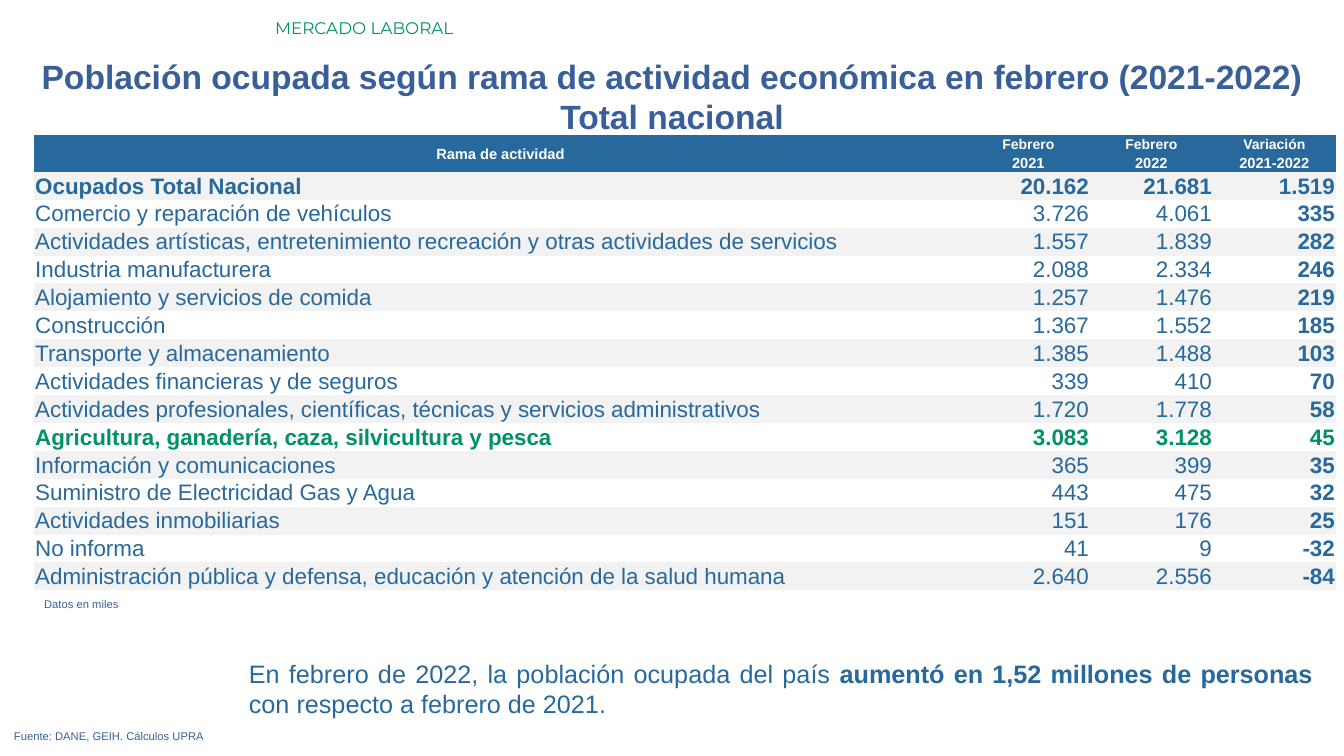
from pptx import Presentation
from pptx.dml.color import RGBColor
from pptx.enum.text import MSO_ANCHOR, MSO_AUTO_SIZE, PP_ALIGN
from pptx.util import Inches, Pt

COLORS = {
    "kicker": "009267",
    "title": "395F9B",
    "blue": "27689D",
    "highlight": "009165",
    "white": "FFFFFF",
    "band": "F2F2F2",
}
NO_STYLE = "{2D5ABB26-0587-4C30-8999-92F81FD0307C}"

HEADER = [
    ("Rama de actividad", "Febrero", "Febrero", "Variación"),
    ("", "2021", "2022", "2021-2022"),
]
BRANCHES = [
    ("Ocupados Total Nacional", "20.162", "21.681", "1.519"),
    ("Comercio y reparación de vehículos", "3.726", "4.061", "335"),
    ("Actividades artísticas, entretenimiento recreación y otras actividades de servicios",
     "1.557", "1.839", "282"),
    ("Industria manufacturera", "2.088", "2.334", "246"),
    ("Alojamiento y servicios de comida", "1.257", "1.476", "219"),
    ("Construcción", "1.367", "1.552", "185"),
    ("Transporte y almacenamiento", "1.385", "1.488", "103"),
    ("Actividades financieras y de seguros", "339", "410", "70"),
    ("Actividades profesionales, científicas, técnicas y servicios administrativos",
     "1.720", "1.778", "58"),
    ("Agricultura, ganadería, caza, silvicultura y pesca", "3.083", "3.128", "45"),
    ("Información y comunicaciones", "365", "399", "35"),
    ("Suministro de Electricidad Gas y Agua", "443", "475", "32"),
    ("Actividades inmobiliarias", "151", "176", "25"),
    ("No informa", "41", "9", "-32"),
    ("Administración pública y defensa, educación y atención de la salud humana",
     "2.640", "2.556", "-84"),
]
TOTAL_ROW, FARMING_ROW = 0, 9


class Deck:
    """Draws elements on a slide measured in a grid of 100 columns by 100 rows."""

    def __init__(self, font="Arial"):
        self.font = font
        self.prs = Presentation()
        self.prs.slide_width, self.prs.slide_height = Inches(13.33), Inches(7.5)
        self.s = self.prs.slides.add_slide(self.prs.slide_layouts[6])

    def cols(self, n):
        return round(self.prs.slide_width * n / 100)

    def rows(self, n):
        return round(self.prs.slide_height * n / 100)

    def style(self, p, size, color, bold=False, align=PP_ALIGN.LEFT, font=None):
        p.alignment = align
        for r in p.runs:
            r.font.name = font or self.font
            r.font.size = Pt(size)
            r.font.bold = bold
            r.font.color.rgb = RGBColor.from_string(COLORS[color])

    def text(self, x, y, w, h, text, size, color, **look):
        sp = self.s.shapes.add_textbox(self.cols(x), self.rows(y), self.cols(w), self.rows(h))
        tf = sp.text_frame
        tf.word_wrap = True
        tf.auto_size = MSO_AUTO_SIZE.SHAPE_TO_FIT_TEXT
        tf.text = text
        for p in tf.paragraphs:
            self.style(p, size, color, **look)
        return tf

    def mixed_text(self, x, y, w, h, pieces, size, color, **look):
        p = self.text(x, y, w, h, "", size, color).paragraphs[0]
        for piece, bold in pieces:
            p.add_run().text = piece
        self.style(p, size, color, **look)
        for r, (piece, bold) in zip(p.runs, pieces):
            r.font.bold = bold

    def cell(self, cell, text, fill, size, color, bold, align):
        cell.margin_left = cell.margin_right = cell.margin_top = Inches(0.01)
        cell.margin_bottom = 0
        cell.vertical_anchor = MSO_ANCHOR.MIDDLE
        if fill:
            cell.fill.solid()
            cell.fill.fore_color.rgb = RGBColor.from_string(COLORS[fill])
        else:
            cell.fill.background()
        cell.text_frame.text = text
        self.style(cell.text_frame.paragraphs[0], size, color, bold, align)

    def table(self, x, y, widths, header, body, header_height, body_height):
        heights = [header_height] * len(header) + [body_height] * len(body)
        frame = self.s.shapes.add_table(
            len(heights), len(widths), self.cols(x), self.rows(y),
            self.cols(sum(widths)), self.rows(sum(heights)))
        table = frame.table
        table._tbl.tblPr[0].text = NO_STYLE
        for column, width in zip(table.columns, widths):
            column.width = self.cols(width)
        for row, height in zip(table.rows, heights):
            row.height = self.rows(height)
        for i, labels in enumerate(header):
            for j, label in enumerate(labels):
                size = 10 if i == 0 and j > 0 else 10.5
                self.cell(table.cell(i, j), label, "blue", size, "white", True, PP_ALIGN.CENTER)
        table.cell(0, 0).merge(table.cell(len(header) - 1, 0))
        for i, values in enumerate(body):
            fill = "band" if i % 2 == 0 else None
            color = "highlight" if i == FARMING_ROW else "blue"
            for j, value in enumerate(values):
                bold = i in (TOTAL_ROW, FARMING_ROW) or j == len(values) - 1
                align = PP_ALIGN.RIGHT if j else PP_ALIGN.LEFT
                self.cell(table.cell(len(header) + i, j), value, fill, 16, color, bold, align)


def main():
    deck = Deck()
    deck.text(19.73, 1.73, 80.27, 4, "MERCADO LABORAL", 12, "kicker", font="Montserrat")
    deck.text(0, 6.67, 100, 12.13,
              "Población ocupada según rama de actividad económica en febrero (2021-2022)\n"
              "Total nacional", 24, "title", bold=True, align=PP_ALIGN.CENTER)
    deck.mixed_text(17.78, 86.4, 80.65, 9.47, [
        ("En febrero de 2022, la población ocupada del país ", False),
        ("aumentó en 1,52 millones de personas ", True),
        ("con respecto a febrero de 2021.", False),
    ], 18, "blue", align=PP_ALIGN.JUSTIFY)
    for x, y, note in [(0.3, 95.87, "Fuente: DANE, GEIH. Cálculos UPRA"),
                       (2.55, 78.4, "Datos en miles")]:
        deck.text(x, y, 96.85, 3.2, note, 8, "title", align=PP_ALIGN.JUSTIFY)
    deck.table(2.55, 17.87, [69.39] + [9.15] * 3, HEADER, BRANCHES, 2.4, 3.6)
    deck.prs.save("out.pptx")


if __name__ == "__main__":
    main()
